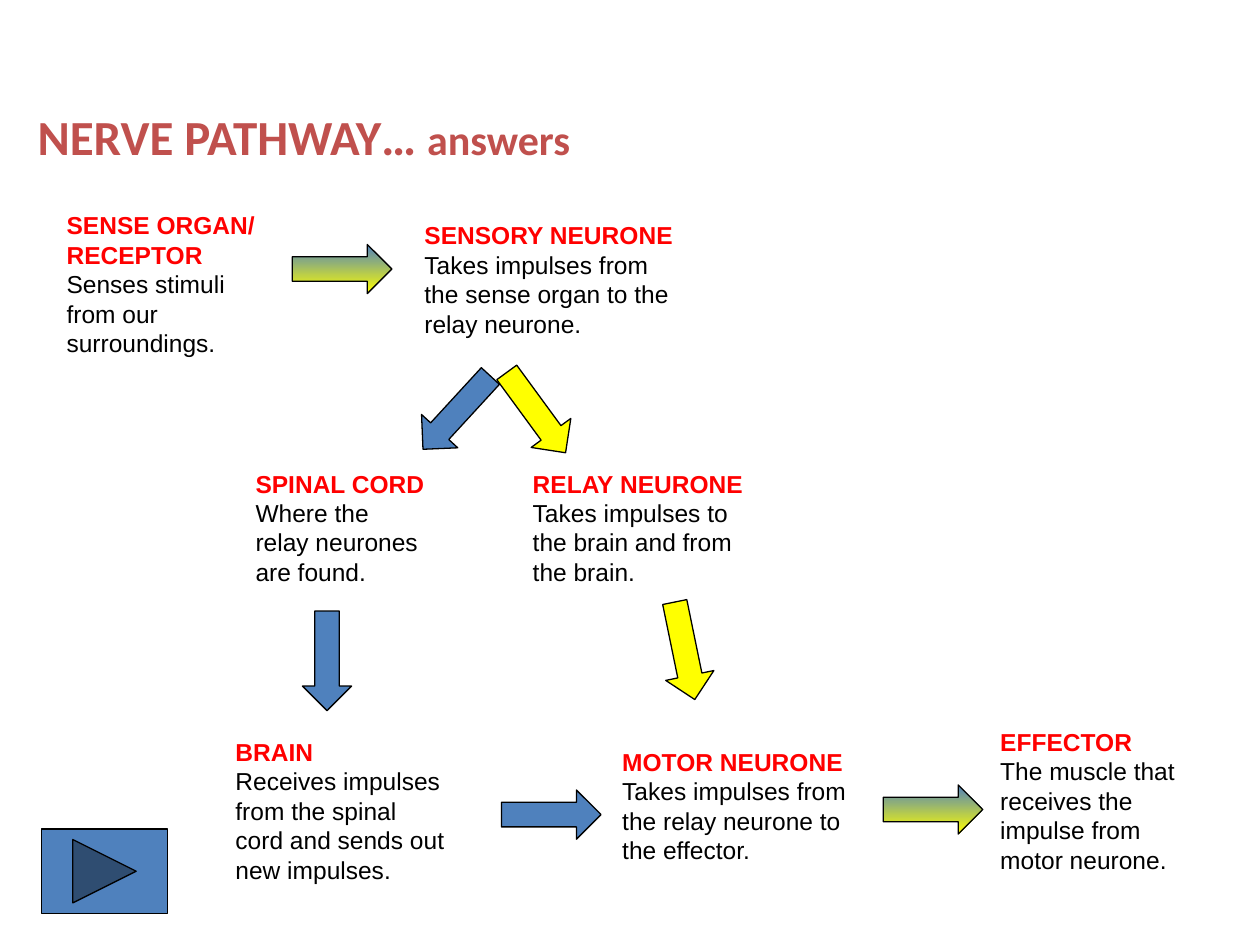
import pptx
import pptx.dml.color
import pptx.enum.shapes
import pptx.enum.text
import pptx.util

RGBColor = pptx.dml.color.RGBColor
Shapes = pptx.enum.shapes.MSO_SHAPE

TITLE_RED = RGBColor(0xC0, 0x50, 0x4D)
HEADING_RED = RGBColor(0xFF, 0x00, 0x00)
BLACK = RGBColor(0x00, 0x00, 0x00)
BLUE = RGBColor(0x4F, 0x81, 0xBD)
YELLOW = RGBColor(0xFF, 0xFF, 0x00)

# The slide is a grid of 100 columns by 75 rows of square cells
COLUMNS, ROWS = 100, 75
CELL = pptx.util.Inches(0.1)
ARROW_LENGTH, ARROW_HEIGHT = 7.9, 3.9

# Heading, description, column, row, columns wide, rows high
STAGES = [
    ("SENSE ORGAN/ RECEPTOR", "Senses stimuli from our surroundings.",
     4.3, 16.2, 18.1, 11.8),
    ("SENSORY NEURONE",
     "Takes impulses from the sense organ to the relay neurone.",
     32.7, 17, 22.8, 11.8),
    ("SPINAL CORD", "Where the relay neurones are found.",
     19.3, 36.7, 15.7, 12.6),
    ("RELAY NEURONE", "Takes impulses to the brain and from the brain.",
     41.3, 36.7, 19.7, 11),
    ("BRAIN",
     "Receives impulses from the spinal cord and sends out new impulses.",
     17.7, 58, 18.9, 11.8),
    ("MOTOR NEURONE",
     "Takes impulses from the relay neurone to the effector.",
     48.4, 58.8, 21.3, 9.4),
    ("EFFECTOR",
     "The muscle that receives the impulse from motor neurone.",
     78.4, 57.2, 17.3, 12.6),
]

# Column, row, rotation, colours (two colours make a gradient)
ARROWS = [
    (23.2, 19.4, 0, (BLUE, YELLOW)),    # sense organ to sensory neurone
    (32.3, 30.8, 132.6, (BLUE,)),       # sensory neurone to spinal cord
    (38.6, 30.8, 53.8, (YELLOW,)),      # sensory neurone to relay neurone
    (70.1, 62.3, 0, (BLUE, YELLOW)),    # motor neurone to effector
    (39.8, 62.7, 0, (BLUE,)),           # brain to motor neurone
    (50.4, 49.7, 78.4, (YELLOW,)),      # relay neurone to motor neurone
    (22, 50.5, 90, (BLUE,)),            # spinal cord to brain
]


def cells(*counts):
    return [round(count * CELL) for count in counts]


def style_run(run, font_name, size, color, bold):
    run.font.name = font_name
    run.font.size = pptx.util.Pt(size)
    run.font.color.rgb = color
    run.font.bold = bold


def add_text_frame(slide, *place):
    frame = slide.shapes.add_textbox(*cells(*place)).text_frame
    frame.word_wrap = True
    return frame


def add_title(slide):
    frame = add_text_frame(slide, 2, 6.8, 98, 7.9)
    frame.vertical_anchor = pptx.enum.text.MSO_ANCHOR.MIDDLE
    for words, size in (("NERVE PATHWAY… ", 28), ("answers", 24)):
        run = frame.paragraphs[0].add_run()
        run.text = words
        style_run(run, "Calibri", size, TITLE_RED, True)


def add_stage(slide, heading, description, *place):
    frame = add_text_frame(slide, *place)
    frame.text = f"{heading}\n{description}"
    heading_line, description_line = frame.paragraphs
    style_run(heading_line.runs[0], "Arial", 14, HEADING_RED, True)
    style_run(description_line.runs[0], "Arial", 14, BLACK, False)


def add_outlined_shape(slide, preset, place, colors):
    shape = slide.shapes.add_shape(preset, *cells(*place))
    shape.shadow.inherit = False
    shape.line.color.rgb = BLACK
    shape.line.width = pptx.util.Pt(0.75)
    if len(colors) == 1:
        shape.fill.solid()
        shape.fill.fore_color.rgb = colors[0]
    else:
        shape.fill.gradient()
        shape.fill.gradient_angle = 270  # from top to bottom
        for position, (stop, color) in enumerate(
                zip(shape.fill.gradient_stops, colors)):
            stop.color.rgb = color
            stop.position = position
    return shape


def add_arrow(slide, column, row, rotation, colors):
    place = (column, row, ARROW_LENGTH, ARROW_HEIGHT)
    arrow = add_outlined_shape(slide, Shapes.RIGHT_ARROW, place, colors)
    arrow.rotation = rotation


def main():
    presentation = pptx.Presentation()
    presentation.slide_width, presentation.slide_height = cells(COLUMNS, ROWS)
    slide = presentation.slides.add_slide(presentation.slide_layouts[6])

    add_title(slide)

    # Stages of the pathway and the arrows between them
    for stage in STAGES:
        add_stage(slide, *stage)
    for arrow in ARROWS:
        add_arrow(slide, *arrow)

    # Button to the next slide
    add_outlined_shape(slide, Shapes.ACTION_BUTTON_FORWARD_OR_NEXT,
                       (3.3, 65.8, 10, 6.7), (BLUE,))

    presentation.save("out.pptx")


if __name__ == "__main__":
    main()
